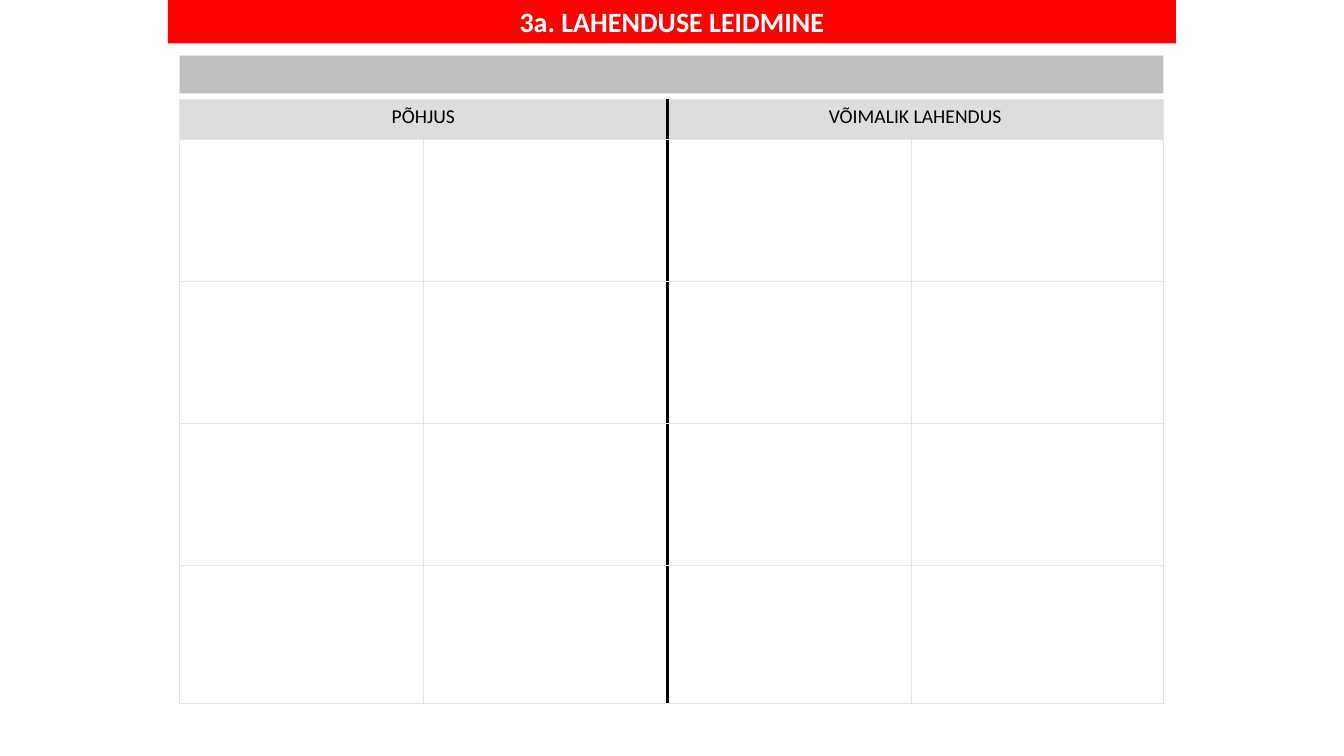
from dataclasses import dataclass

from lxml import etree
from pptx import Presentation
from pptx.dml.color import RGBColor
from pptx.enum.shapes import MSO_SHAPE
from pptx.enum.text import MSO_ANCHOR, MSO_AUTO_SIZE, PP_ALIGN
from pptx.oxml.ns import qn
from pptx.util import Pt

RECT = MSO_SHAPE.RECTANGLE
MIDDLE = MSO_ANCHOR.MIDDLE
NO_FIT = MSO_AUTO_SIZE.NONE
CENTER = PP_ALIGN.CENTER
TITLE_ONLY = 5


@dataclass(frozen=True)
class Theme:
    font: str = "Calibri"
    title_size: float = 20
    header_size: float = 14
    red: str = "FF0000"
    white: str = "FFFFFF"
    black: str = "000000"
    bar: str = "C0C0C0"
    header: str = "DDDDDD"
    grid: str = "E7E6E6"
    grid_width: float = 1
    divider_width: float = 2.25


THEME = Theme()
LEFT, WIDTH = 128.2, 702.7
COLUMNS = [174.24, 174.24, 174.24, 180]
ROWS = [28.1, 101.5, 101.5, 101.5, 98.6]
HEADERS = ["PÕHJUS", "VÕIMALIK LAHENDUS"]
DIVIDER = 2  # column that starts at the heavy vertical line


def set_fill(item, color):
    item.fill.solid()
    item.fill.fore_color.rgb = RGBColor.from_string(color)


def set_text(tf, text, *, size, color, bold=False):
    p = tf.paragraphs[0]
    p.alignment = CENTER
    r = p.add_run()
    r.text = text
    r.font.name = THEME.font
    r.font.size = Pt(size)
    r.font.bold = bold
    r.font.color.rgb = RGBColor.from_string(color)


def add_title(s, text):
    title = s.shapes.title
    title.left, title.top = Pt(120), Pt(0)
    title.width, title.height = Pt(720), Pt(31)
    set_fill(title, THEME.red)
    tf = title.text_frame
    tf.auto_size = NO_FIT
    tf.vertical_anchor = MIDDLE
    set_text(tf, text, size=THEME.title_size, color=THEME.white, bold=True)


def add_bar(s):
    bar = s.shapes.add_shape(RECT, Pt(LEFT), Pt(39.6), Pt(WIDTH), Pt(27.4))
    bar.shadow.inherit = False
    set_fill(bar, THEME.bar)
    bar.line.color.rgb = RGBColor.from_string(THEME.grid)
    bar.line.width = Pt(0.75)


def set_borders(cell, first, last):
    """Draw the four borders of a cell that covers columns first to last."""
    tc_pr = cell._tc.get_or_add_tcPr()
    heavy = {"lnL": first == DIVIDER, "lnR": last == DIVIDER - 1}
    for i, side in enumerate(("lnL", "lnR", "lnT", "lnB")):
        is_heavy = heavy.get(side, False)
        width = THEME.divider_width if is_heavy else THEME.grid_width
        ln = etree.Element(qn(f"a:{side}"), w=str(Pt(width)))
        fill = etree.SubElement(ln, qn("a:solidFill"))
        color = THEME.black if is_heavy else THEME.grid
        etree.SubElement(fill, qn("a:srgbClr"), val=color)
        tc_pr.insert(i, ln)


def add_solution_table(s):
    frame = s.shapes.add_table(len(ROWS), len(COLUMNS), Pt(LEFT), Pt(71.3),
                               Pt(WIDTH), Pt(sum(ROWS)))
    table = frame.table
    table.first_row = table.horz_banding = False
    for column, width in zip(table.columns, COLUMNS):
        column.width = Pt(width)
    for row, height in zip(table.rows, ROWS):
        row.height = Pt(height)
    for i, text in enumerate(HEADERS):
        cell = table.cell(0, 2 * i)
        cell.merge(table.cell(0, 2 * i + 1))
        set_text(cell.text_frame, text, size=THEME.header_size, color=THEME.black)
    for i in range(len(ROWS)):
        for j in range(len(COLUMNS)):
            cell = table.cell(i, j)
            if i == 0:
                set_fill(cell, THEME.header)
            else:
                cell.fill.background()
            span = cell.span_width if cell.is_merge_origin else 1
            set_borders(cell, j, j + span - 1)


def main():
    prs = Presentation()
    prs.slide_width, prs.slide_height = Pt(960), Pt(540)
    s = prs.slides.add_slide(prs.slide_layouts[TITLE_ONLY])
    add_title(s, "3a. LAHENDUSE LEIDMINE")
    add_bar(s)
    add_solution_table(s)
    prs.save("out.pptx")


if __name__ == "__main__":
    main()
